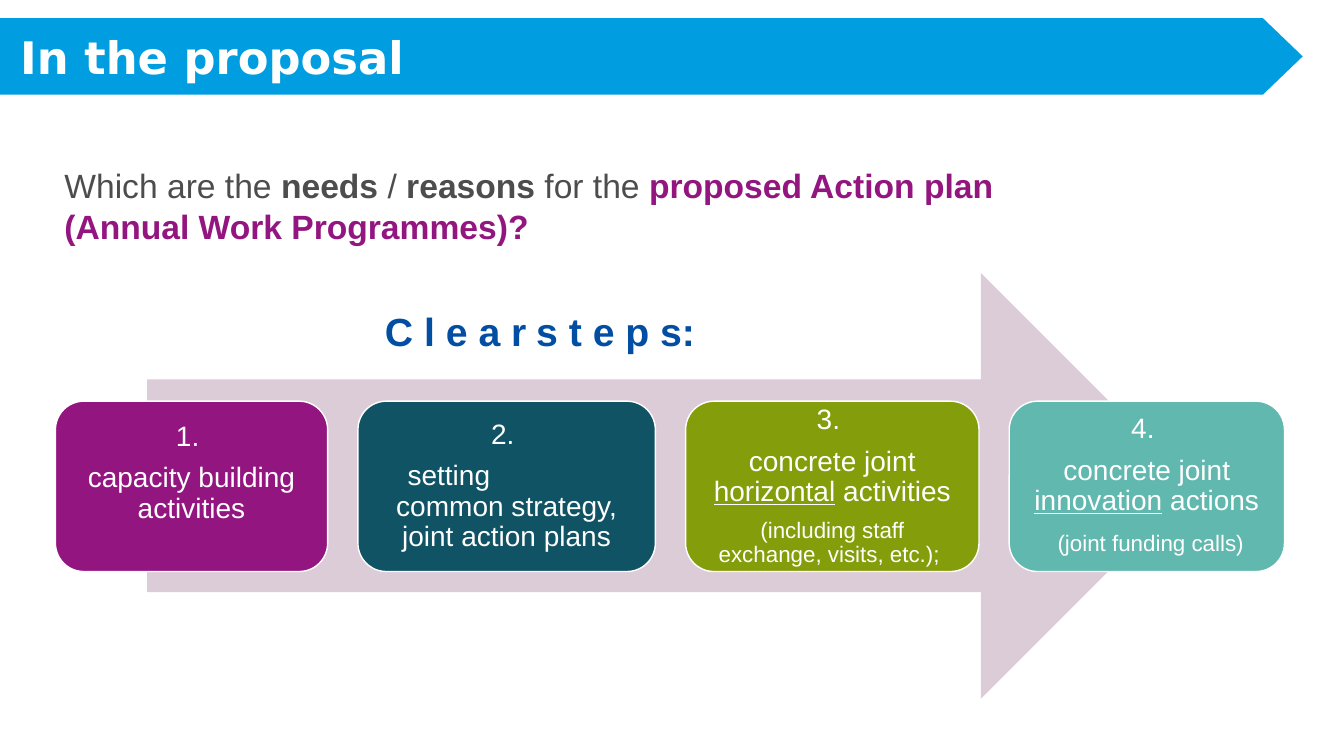
"""Build the slide on the needs and steps of a proposed action plan."""
from lxml.etree import SubElement
from pptx import Presentation
from pptx.dml.color import RGBColor
from pptx.enum.shapes import MSO_SHAPE
from pptx.enum.text import MSO_ANCHOR, MSO_AUTO_SIZE, PP_ALIGN
from pptx.oxml.ns import qn
from pptx.util import Inches, Pt

COLORS = {
    "white": "FFFFFF", "banner": "009EE0", "grey": "4D4D4D", "purple": "931680",
    "arrow": "DCCCD8", "blue": "024EA2", "teal": "0F5364", "olive": "849D0A",
    "aqua": "61B8AF",
}
TITLE = "In the proposal"
HEADING = "C l e a r\ts t e p s:"
BOLD = {"bold": True}
ACCENT = {"bold": True, "color": "purple"}
UNDER = {"underline": True}
SMALL = {"size": 16}
QUESTION = [
    ("Which are the ", {}), ("needs", BOLD), (" / ", {}), ("reasons", BOLD),
    (" for the ", {}), ("proposed Action plan ", ACCENT), ("\n", {}),
    ("(Annual Work Programmes)?", ACCENT),
]
STEPS = [
    {"width": 2.7, "fill": "purple", "bottom": 0.42, "paras": [
        ([("1. ", {})], {}),
        ([("capacity building activities", {})], {})]},
    {"width": 2.95, "fill": "teal", "paras": [
        ([("2. ", {})], {}),
        ([("setting", {})], {"align": PP_ALIGN.LEFT, "indent": 0.25, "after": 0}),
        ([("common strategy, joint action plans", {})], {})]},
    {"width": 2.91, "fill": "olive", "paras": [
        ([("3. ", {})], {}),
        ([("concrete joint ", {}), ("horizontal", UNDER), (" activities ", {})], {}),
        ([("(including staff exchange, visits, etc.); ", SMALL)], {"after": 0})]},
    {"width": 2.73, "fill": "aqua", "paras": [
        ([("4. ", {})], {}),
        ([("concrete joint ", {}), ("innovation", UNDER), (" actions", {})], {}),
        ([(" ", {}), ("(joint funding calls)", SMALL)], {"after": 0})]},
]
STEP_LEFT, STEP_TOP, STEP_HEIGHT, STEP_GAP = 0.55, 3.98, 1.69, 0.3
STEP_INSET = 0.16


def rgb(name):
    """Return the named colour."""
    return RGBColor.from_string(COLORS[name])


def add_shape(shapes, kind, box, fill, line=None):
    """Add a filled preset shape without a shadow."""
    sp = shapes.add_shape(kind, *map(Inches, box))
    sp.shadow.inherit = False
    sp.fill.solid()
    sp.fill.fore_color.rgb = rgb(fill)
    if line:
        sp.line.color.rgb = rgb(line)
        sp.line.width = Pt(1)
    else:
        sp.line.fill.background()
    return sp


def add_text(p, runs, size=20, color="white", font="Arial", bold=False,
             align=PP_ALIGN.LEFT, spacing=None, after=0, indent=0, tab=None):
    """Fill a paragraph with runs, each overriding the paragraph's format."""
    pPr = p._p.get_or_add_pPr()
    pPr.set("marL", str(Inches(indent)))
    pPr.set("indent", "0")
    p.alignment = align
    p.space_before = Pt(0)
    p.space_after = Pt(after)
    if spacing:
        p.line_spacing = spacing
    if tab:
        tabs = SubElement(pPr, qn("a:tabLst"))
        SubElement(tabs, qn("a:tab"), pos=str(Inches(tab)), algn="l")
    for text, fmt in runs:
        if text == "\n":
            p.add_line_break()
            continue
        r = p.add_run()
        r.text = text
        r.font.name = font
        r.font.size = Pt(fmt.get("size", size))
        r.font.bold = fmt.get("bold", bold)
        r.font.underline = fmt.get("underline", False)
        r.font.color.rgb = rgb(fmt.get("color", color))


def set_frame(tf, left=0.1, top=0.05, right=0.1, bottom=0.05, anchor=MSO_ANCHOR.TOP):
    """Set wrapping, insets and anchor of a text frame."""
    tf.word_wrap = True
    tf.auto_size = MSO_AUTO_SIZE.NONE
    tf.vertical_anchor = anchor
    tf.margin_left, tf.margin_top = Inches(left), Inches(top)
    tf.margin_right, tf.margin_bottom = Inches(right), Inches(bottom)


def add_textbox(shapes, box, runs, **fmt):
    """Add a text box of one paragraph."""
    tf = shapes.add_textbox(*map(Inches, box)).text_frame
    set_frame(tf)
    add_text(tf.paragraphs[0], runs, **fmt)


def add_step(shapes, left, step):
    """Add one step of the arrow."""
    box = (left, STEP_TOP, step["width"], STEP_HEIGHT)
    sp = add_shape(shapes, MSO_SHAPE.ROUNDED_RECTANGLE, box, step["fill"], "white")
    tf = sp.text_frame
    set_frame(tf, STEP_INSET, STEP_INSET, STEP_INSET,
              step.get("bottom", STEP_INSET), MSO_ANCHOR.MIDDLE)
    for i, (runs, fmt) in enumerate(step["paras"]):
        p = tf.add_paragraph() if i else tf.paragraphs[0]
        add_text(p, runs, **{"align": PP_ALIGN.CENTER, "spacing": 0.9, "after": 8, **fmt})


def main():
    """Build and save the slide."""
    prs = Presentation()
    prs.slide_width, prs.slide_height = Inches(13.33), Inches(7.5)
    slide = prs.slides.add_slide(prs.slide_layouts[5])
    shapes = slide.shapes

    add_textbox(shapes, (0.54, 1.59, 12.38, 0.91), QUESTION, size=24, color="grey")
    add_shape(shapes, MSO_SHAPE.RIGHT_ARROW, (1.46, 2.71, 10.38, 4.22), "arrow")
    left = STEP_LEFT
    for step in STEPS:
        add_step(shapes, left, step)
        left += step["width"] + STEP_GAP
    add_textbox(shapes, (3.72, 3, 4.23, 0.57), [(HEADING, {})],
                size=28, color="blue", bold=True, tab=1.83)

    banner = (0, 0.18, 12.92, 0.76)
    sp = add_shape(shapes, MSO_SHAPE.PENTAGON, banner, "banner")
    sp.adjustments[0] = 0.52
    title = shapes.title
    title.left, title.top, title.width, title.height = map(Inches, banner)
    set_frame(title.text_frame, left=0.2, anchor=MSO_ANCHOR.MIDDLE)
    add_text(title.text_frame.paragraphs[0], [(TITLE, {})],
             size=32, font="DejaVu Sans", bold=True)
    sp._element.addnext(title._element)
    prs.save("out.pptx")


if __name__ == "__main__":
    main()
